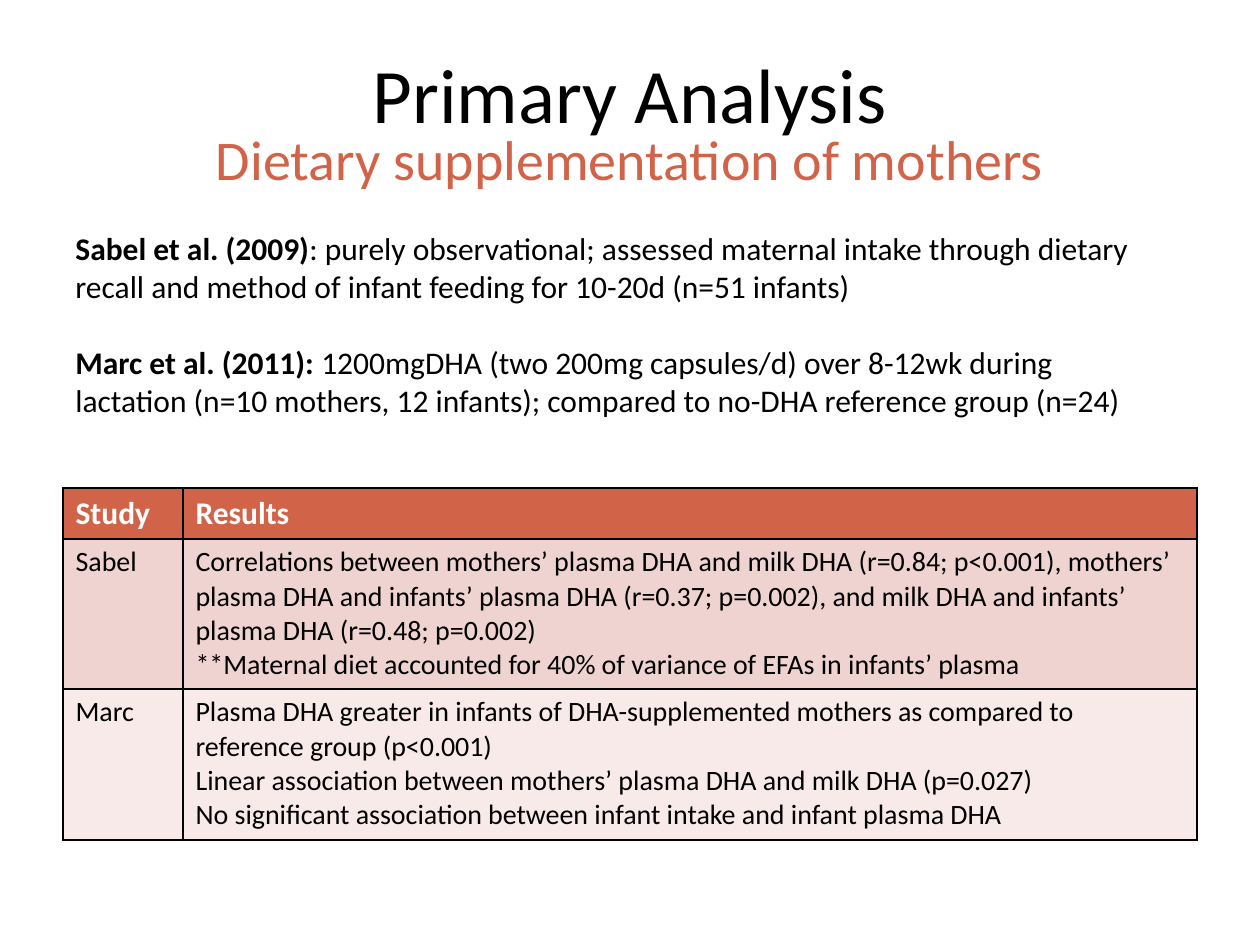
from lxml import etree
from pptx import Presentation
from pptx.dml.color import RGBColor
from pptx.enum.text import MSO_ANCHOR, PP_ALIGN
from pptx.oxml.ns import qn
from pptx.util import Emu, Pt

BLACK = RGBColor(0x00, 0x00, 0x00)
WHITE = RGBColor(0xFF, 0xFF, 0xFF)
RUST = RGBColor(0xD1, 0x63, 0x49)
ROSE = RGBColor(0xEE, 0xD3, 0xD0)
BLUSH = RGBColor(0xF7, 0xEA, 0xE9)

LEFT, CENTER = PP_ALIGN.LEFT, PP_ALIGN.CENTER
TOP, MIDDLE = MSO_ANCHOR.TOP, MSO_ANCHOR.MIDDLE
FONT = "Calibri"
PX_PER_INCH = 126
BLANK_LAYOUT = 6

STUDIES = [
    ("Sabel et al. (2009)",
     ": purely observational; assessed maternal intake through dietary recall "
     "and method of infant feeding for 10-20d (n=51 infants)"),
    ("Marc et al. (2011):",
     " 1200mgDHA (two 200mg capsules/d) over 8-12wk during lactation "
     "(n=10 mothers, 12 infants); compared to no-DHA reference group (n=24)"),
]

RESULTS = [
    ("Study", ["Results"]),
    ("Sabel", [
        "Correlations between mothers’ plasma DHA and milk DHA (r=0.84; p<0.001), "
        "mothers’ plasma DHA and infants’ plasma DHA (r=0.37; p=0.002), "
        "and milk DHA and infants’ plasma DHA (r=0.48; p=0.002)",
        "**Maternal diet accounted for 40% of variance of EFAs in infants’ plasma",
    ]),
    ("Marc", [
        "Plasma DHA greater in infants of DHA-supplemented mothers "
        "as compared to reference group (p<0.001)",
        "Linear association between mothers’ plasma DHA and milk DHA (p=0.027)",
        "No significant association between infant intake and infant plasma DHA",
    ]),
]

ROW_STYLES = [
    (51, RUST, {"size": Pt(18), "bold": True}, WHITE),
    (150, ROSE, {"size": Pt(16), "bold": False}, BLACK),
    (151, BLUSH, {"size": Pt(16), "bold": False}, BLACK),
]


def px(length):
    return Emu(round(length * 914400 / PX_PER_INCH))


class SlideBuilder:
    def __init__(self, slide, font):
        self.slide = slide
        self.font = font

    def fill_text(self, frame, paragraphs, color, align=LEFT, before=0, gap=0):
        for index, runs in enumerate(paragraphs):
            paragraph = frame.add_paragraph() if index else frame.paragraphs[0]
            paragraph.alignment = align
            paragraph.space_before = Pt(gap if index else before)
            for text, style in runs:
                run = paragraph.add_run()
                run.text = text
                for name, value in {"name": self.font, **style}.items():
                    setattr(run.font, name, value)
                run.font.color.rgb = color

    def text(self, box, paragraphs, color, anchor=TOP, **layout):
        shape = self.slide.shapes.add_textbox(*map(px, box))
        frame = shape.text_frame
        frame.word_wrap = True
        frame.vertical_anchor = anchor
        self.fill_text(frame, paragraphs, color, **layout)

    def border(self, cell, color, width):
        properties = cell._tc.get_or_add_tcPr()
        for side in ("a:lnL", "a:lnR", "a:lnT", "a:lnB"):
            line = etree.SubElement(properties, qn(side), w=str(width))
            fill = etree.SubElement(line, qn("a:solidFill"))
            etree.SubElement(fill, qn("a:srgbClr"), val=str(color))

    def table(self, box, widths, rows, row_styles):
        shape = self.slide.shapes.add_table(len(rows), len(widths), *map(px, box))
        table = shape.table
        for column, width in zip(table.columns, widths):
            column.width = px(width)
        for row, (study, results), row_style in zip(table.rows, rows, row_styles):
            height, fill, style, color = row_style
            row.height = px(height)
            for cell, lines in zip(row.cells, ([study], results)):
                self.border(cell, BLACK, Pt(1))
                cell.fill.solid()
                cell.fill.fore_color.rgb = fill
                paragraphs = [[(line, style)] for line in lines]
                self.fill_text(cell.text_frame, paragraphs, color)


def main():
    presentation = Presentation()
    presentation.slide_width = px(1260)
    presentation.slide_height = px(945)
    slide = presentation.slides.add_slide(presentation.slide_layouts[BLANK_LAYOUT])
    builder = SlideBuilder(slide, FONT)

    builder.text((63, 32, 1134, 121), [[("Primary Analysis", {"size": Pt(44)})]],
                 BLACK, anchor=MIDDLE, align=CENTER)
    builder.text((63, 118, 1134, 81),
                 [[("Dietary supplementation of mothers", {"size": Pt(32)})]],
                 RUST, align=CENTER, before=2)
    builder.table((63, 488, 1134, 352), (120, 1014), RESULTS, ROW_STYLES)
    summaries = [[(name, {"size": Pt(18), "bold": True}),
                  (summary, {"size": Pt(18), "bold": False})]
                 for name, summary in STUDIES]
    builder.text((63, 223, 1104, 204), summaries, BLACK, gap=22)
    presentation.save("out.pptx")


if __name__ == "__main__":
    main()
